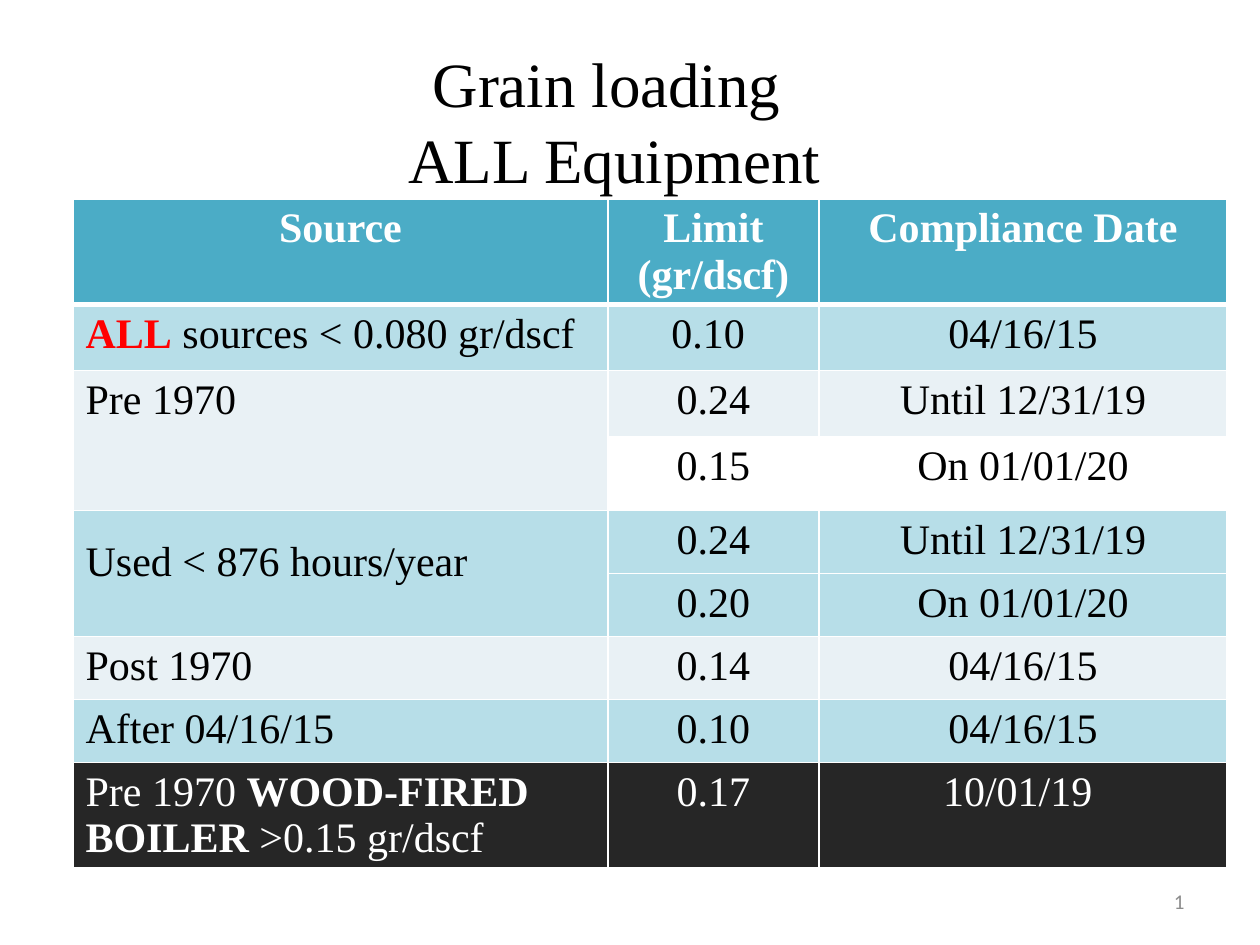
from lxml import etree
from pptx import Presentation
from pptx.dml.color import RGBColor
from pptx.enum.text import MSO_ANCHOR, PP_ALIGN
from pptx.oxml.ns import qn
from pptx.util import Emu, Pt

CENTER, LEFT, RIGHT = PP_ALIGN.CENTER, PP_ALIGN.LEFT, PP_ALIGN.RIGHT
MIDDLE = MSO_ANCHOR.MIDDLE

WHITE = RGBColor(0xFF, 0xFF, 0xFF)
BLACK = RGBColor(0, 0, 0)
RED = RGBColor(0xFF, 0, 0)
GRAY = RGBColor(0x8C, 0x8C, 0x8C)
TEAL = RGBColor(0x4B, 0xAC, 0xC6)
BAND = RGBColor(0xB7, 0xDE, 0xE8)
PALE = RGBColor(0xE9, 0xF1, 0xF5)
DARK = RGBColor(0x26, 0x26, 0x26)

SERIF = "Times New Roman"
TITLE = "Grain loading \vALL Equipment"
COLUMNS = [535, 211, 408]

# row height, (source fill, value fill), text colour, cell texts
ROWS = [
    (105, (TEAL, TEAL), WHITE, ("Source", "Limit\n(gr/dscf)", "Compliance Date")),
    (66, (BAND, BAND), BLACK, ("ALL sources < 0.080 gr/dscf", "0.10 ", "04/16/15")),
    (66, (PALE, PALE), BLACK, ("Pre 1970", "0.24", "Until 12/31/19")),
    (74, (PALE, WHITE), BLACK, ("", "0.15", "On 01/01/20")),
    (63, (BAND, BAND), BLACK, ("Used < 876 hours/year", "0.24", "Until 12/31/19")),
    (63, (BAND, BAND), BLACK, ("", "0.20", "On 01/01/20")),
    (63, (PALE, PALE), BLACK, ("Post 1970", "0.14", "04/16/15")),
    (63, (BAND, BAND), BLACK, ("After 04/16/15", "0.10", "04/16/15")),
    (105, (DARK, DARK), WHITE,
     ("Pre 1970 WOOD-FIRED BOILER >0.15 gr/dscf", "0.17", "10/01/19 ")),
]
EMPHASIS = {"ALL": RED, "WOOD-FIRED BOILER ": WHITE}
USED_ROW = 4
MERGED_ROWS = [2, USED_ROW]


def px(n):
    return Emu(round(n * 914400 / 126))


def place(shape, left, top, width, height):
    shape.left, shape.top = px(left), px(top)
    shape.width, shape.height = px(width), px(height)


def style(font, size, color, bold=False, name=SERIF):
    font.name, font.size, font.bold = name, Pt(size), bold
    font.color.rgb = color


def split_emphasis(text):
    """Return (text, emphasis key or None) pieces of a line."""
    for key in EMPHASIS:
        if key in text:
            before, after = text.split(key)
            return [(t, k) for t, k in ((before, None), (key, key), (after, None)) if t]
    return [(text, None)]


def set_borders(cell, bottom_width):
    tc_pr = cell._tc.get_or_add_tcPr()
    widths = {"a:lnL": 1, "a:lnR": 1, "a:lnT": 1, "a:lnB": bottom_width}
    for i, (tag, width) in enumerate(widths.items()):
        ln = etree.Element(qn(tag), w=str(Pt(width)))
        fill = etree.SubElement(ln, qn("a:solidFill"))
        etree.SubElement(fill, qn("a:srgbClr"), val=str(WHITE))
        tc_pr.insert(i, ln)


def fill_cell(cell, text, fill, color, align, header):
    cell.fill.solid()
    cell.fill.fore_color.rgb = fill
    set_borders(cell, 3 if header else 1)
    tf = cell.text_frame
    for i, line in enumerate(text.split("\n")):
        p = tf.add_paragraph() if i else tf.paragraphs[0]
        p.alignment = align
        style(p.font, 24, color)
        for piece, key in split_emphasis(line) if line else []:
            r = p.add_run()
            r.text = piece
            style(r.font, 24, EMPHASIS.get(key, color), header or key is not None)


def add_limits_table(s):
    height = sum(row[0] for row in ROWS)
    frame = s.shapes.add_table(len(ROWS), len(COLUMNS), px(73), px(199),
                               px(sum(COLUMNS)), px(height))
    table = frame.table
    table.horz_banding = False
    for column, width in zip(table.columns, COLUMNS):
        column.width = px(width)
    for i, (row_height, (source_fill, value_fill), color, texts) in enumerate(ROWS):
        table.rows[i].height = px(row_height)
        for j, text in enumerate(texts):
            fill = value_fill if j else source_fill
            align = CENTER if j or i == 0 else LEFT
            fill_cell(table.cell(i, j), text, fill, color, align, i == 0)
    for i in MERGED_ROWS:
        table.cell(i, 0).merge(table.cell(i + 1, 0))
    table.cell(USED_ROW, 0).margin_top = px(29)
    return frame


def add_slide_number(s):
    box = s.shapes.add_textbox(0, 0, 0, 0)
    place(box, 903, 876, 294, 50)
    tf = box.text_frame
    tf.word_wrap = True
    tf.vertical_anchor = MIDDLE
    p = tf.paragraphs[0]
    p.alignment = RIGHT
    r = p.add_run()
    r.text = "3"
    style(r.font, 12, GRAY, name="Calibri")
    field = etree.SubElement(p._p, qn("a:fld"), type="slidenum",
                             id="{B6F15528-21DE-4FAA-801E-634DDDAF4B2B}")
    field.extend(list(r._r))
    p._p.remove(r._r)


def main():
    prs = Presentation()
    prs.slide_width, prs.slide_height = px(1260), px(945)
    s = prs.slides.add_slide(prs.slide_layouts[5])

    title = s.shapes.title
    place(title, 63, 21, 1103, 199)
    tf = title.text_frame
    tf.text = TITLE
    tf.vertical_anchor = MIDDLE
    p = tf.paragraphs[0]
    p.alignment = CENTER
    for r in p.runs:
        style(r.font, 36, BLACK)

    frame = add_limits_table(s)
    title._element.addprevious(frame._element)  # table lies behind the title
    add_slide_number(s)
    prs.save("out.pptx")


if __name__ == "__main__":
    main()
